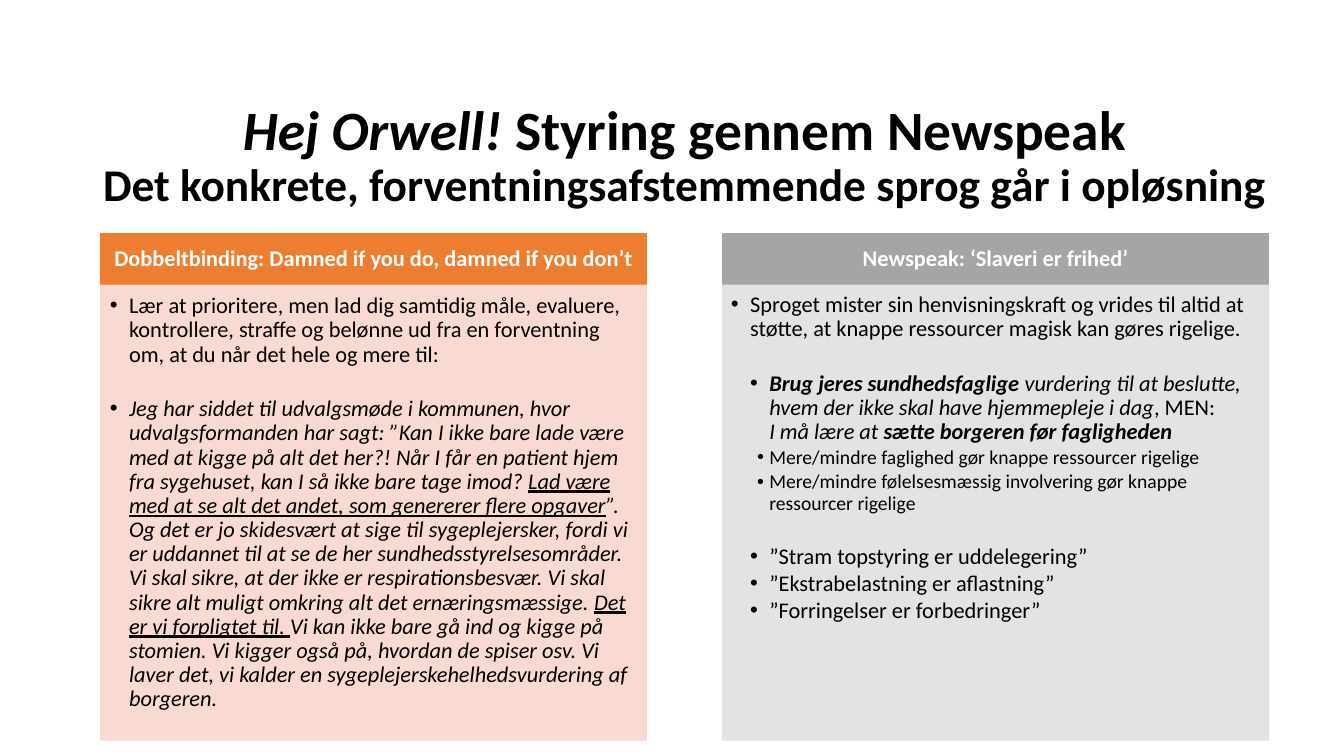
from lxml.etree import SubElement
from pptx import Presentation
from pptx.dml.color import RGBColor
from pptx.enum.shapes import MSO_SHAPE
from pptx.enum.text import MSO_ANCHOR, PP_ALIGN
from pptx.oxml.ns import qn
from pptx.util import Inches, Pt

COL_W, HEAD_H, BODY_H = 5.41, 0.5, 4.51
HEAD_TOP, BODY_TOP = 2.32, 2.83
BLANK_LINE = 19.6


def rgb(value):
    return RGBColor.from_string(value)


class Deck:
    font = "Calibri"

    def __init__(self):
        self.prs = Presentation()
        self.prs.slide_width, self.prs.slide_height = Inches(13.33), Inches(7.5)
        self.s = self.prs.slides.add_slide(self.prs.slide_layouts[6])

    def frame(self, sp, insets, anchor):
        tf = sp.text_frame
        tf.word_wrap = True
        tf.vertical_anchor = anchor
        tf.margin_left, tf.margin_top, tf.margin_right, tf.margin_bottom = map(Inches, insets)
        return tf

    def paragraph(self, tf, runs, size, color="000000", align=PP_ALIGN.LEFT):
        p = tf.paragraphs[0]
        if p.runs:
            p = tf.add_paragraph()
        p.alignment = align
        p.line_spacing = 0.9
        for text, style in runs:
            if text == "\v":
                p.add_line_break()
                continue
            r = p.add_run()
            r.text = text
            r.font.name, r.font.size = self.font, Pt(size)
            r.font.color.rgb = rgb(color)
            r.font.bold = "b" in style
            r.font.italic = "i" in style
            r.font.underline = "u" in style
        return p

    def title(self, lines):
        sp = self.s.shapes.add_textbox(Inches(0.61), Inches(0.75), Inches(12.36), Inches(1.62))
        tf = self.frame(sp, (0.1, 0.05, 0.1, 0.05), MSO_ANCHOR.MIDDLE)
        for runs, size in lines:
            self.paragraph(tf, runs, size, align=PP_ALIGN.CENTER)

    def rect(self, left, top, height, color, opacity=100):
        sp = self.s.shapes.add_shape(
            MSO_SHAPE.RECTANGLE, Inches(left), Inches(top), Inches(COL_W), Inches(height))
        sp.shadow.inherit = False
        sp.fill.solid()
        sp.fill.fore_color.rgb = rgb(color)
        sp.line.color.rgb = rgb(color)
        sp.line.width = Pt(1)
        if opacity < 100:
            for clr in sp.element.spPr.iter(qn("a:srgbClr")):
                SubElement(clr, qn("a:alpha"), val=str(opacity * 1000))
        return sp

    def header(self, left, text, color):
        sp = self.rect(left, HEAD_TOP, HEAD_H, color)
        tf = self.frame(sp, (0.12, 0.07, 0.12, 0.07), MSO_ANCHOR.MIDDLE)
        self.paragraph(tf, [(text, "b")], 16, "FFFFFF", PP_ALIGN.CENTER)

    def body(self, left, color, insets, items):
        sp = self.rect(left, BODY_TOP, BODY_H, color, 90)
        tf = self.frame(sp, insets, MSO_ANCHOR.TOP)
        for level, before, runs in items:
            p = self.paragraph(tf, runs, 14 if level == 3 else 16)
            p.level = level
            p.space_before, p.space_after = Pt(before), Pt(2.2)
            self.bullet(p, 0.19 if level == 1 else 0.38, 0.12 if level == 3 else 0.19)

    def bullet(self, p, margin, hanging):
        pPr = p._p.get_or_add_pPr()
        pPr.set("marL", str(Inches(margin)))
        pPr.set("indent", str(-Inches(hanging)))
        SubElement(pPr, qn("a:buFont"), typeface="Arial")
        SubElement(pPr, qn("a:buChar"), char="•")


def main():
    deck = Deck()
    deck.title([
        ([("Hej Orwell! ", "bi"), ("Styring gennem Newspeak", "b")], 39.6),
        ([("Det konkrete, forventningsafstemmende sprog går i opløsning", "b")], 32.4),
    ])

    double_bind = [
        (1, 0, [("Lær at prioritere, men lad dig samtidig måle, evaluere, kontrollere, straffe "
                 "og belønne ud fra en forventning om, at du når det hele og mere til:", "")]),
        (1, BLANK_LINE, [
            ("Jeg har siddet til udvalgsmøde i kommunen, hvor udvalgsformanden har sagt: "
             "”Kan I ikke bare lade være med at kigge på alt det her?! Når I får en patient "
             "hjem fra sygehuset, kan I så ikke bare tage imod? ", "i"),
            ("Lad være med at se alt det andet, som genererer flere opgaver", "iu"),
            ("”. Og det er jo skidesvært at sige til sygeplejersker, fordi vi er uddannet til "
             "at se de her sundhedsstyrelsesområder. Vi skal sikre, at der ikke er "
             "respirationsbesvær. Vi skal sikre alt muligt omkring alt det "
             "ernæringsmæssige. ", "i"),
            ("Det er vi forpligtet til. ", "iu"),
            ("Vi kan ikke bare gå ind og kigge på stomien. Vi kigger også på, hvordan de "
             "spiser osv. Vi laver det, vi kalder en sygeplejerskehelhedsvurdering af "
             "borgeren.", "i"),
        ]),
    ]
    newspeak = [
        (1, 0, [("Sproget mister sin henvisningskraft og vrides til altid at støtte, at "
                 "knappe ressourcer magisk kan gøres rigelige.", "")]),
        (2, BLANK_LINE, [
            ("Brug jeres sundhedsfaglige ", "bi"),
            ("vurdering til at beslutte, hvem der ikke skal have hjemmepleje i dag", "i"),
            (", MEN:", ""),
            ("\v", ""),
            ("I må lære at ", "i"),
            ("sætte borgeren før fagligheden", "bi"),
        ]),
        (3, 0, [("Mere/mindre faglighed gør knappe ressourcer rigelige", "")]),
        (3, 0, [("Mere/mindre følelsesmæssig involvering gør knappe ressourcer rigelige", "")]),
        (2, BLANK_LINE, [("”Stram topstyring er uddelegering”", "")]),
        (2, 0, [("”Ekstrabelastning er aflastning”", "")]),
        (2, 0, [("”Forringelser er forbedringer”", "")]),
    ]
    columns = [
        (1, "Dobbeltbinding: Damned if you do, damned if you don’t", "ED7D31", "F8D7CE",
         (0.09, 0.09, 0.12, 0.14), double_bind),
        (7.17, "Newspeak: ‘Slaveri er frihed’", "A5A5A5", "E1E1E1",
         (0.08, 0.08, 0.11, 0.12), newspeak),
    ]
    for left, heading, head_color, body_color, insets, items in columns:
        deck.header(left, heading, head_color)
        deck.body(left, body_color, insets, items)
    deck.prs.save("out.pptx")


if __name__ == "__main__":
    main()
